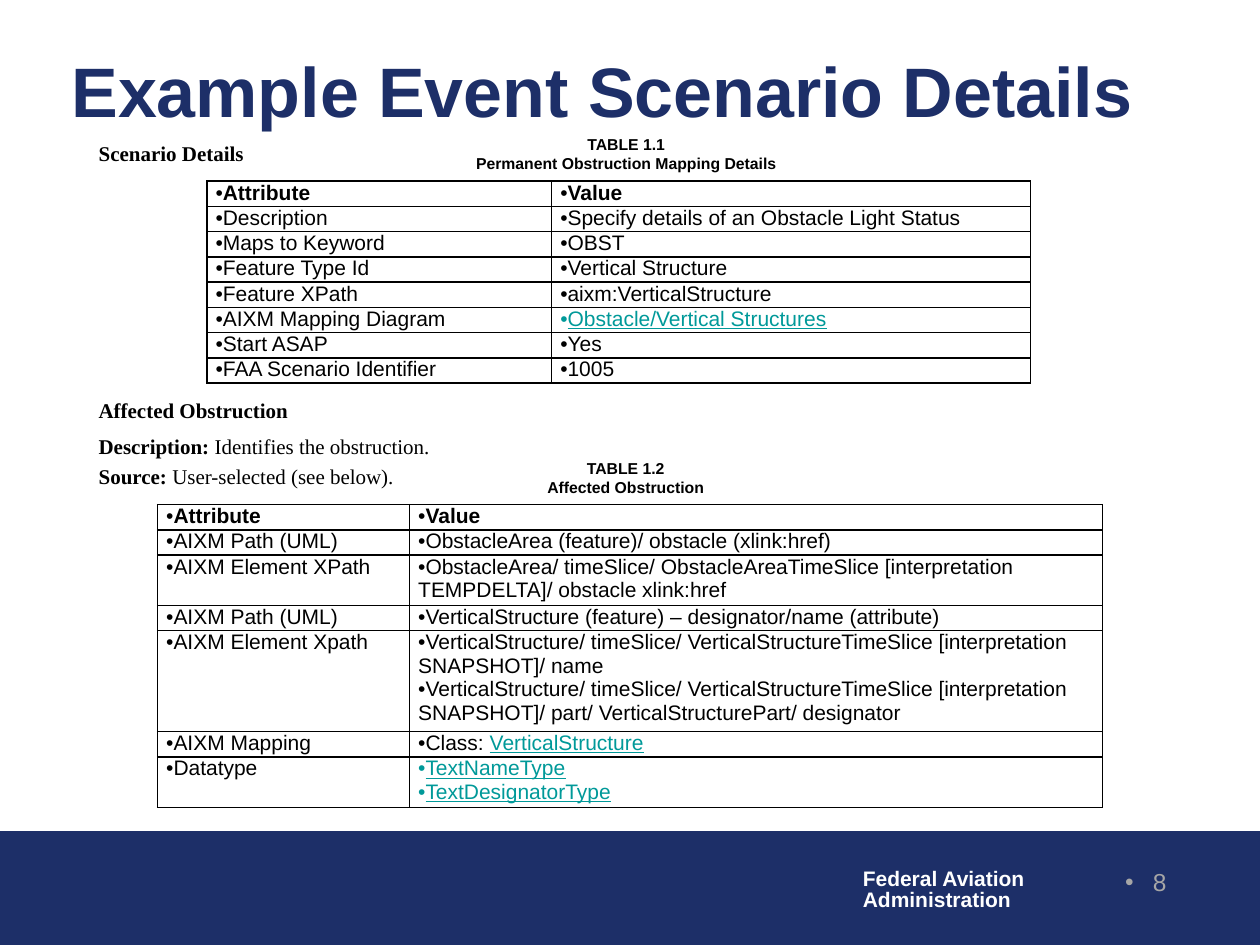
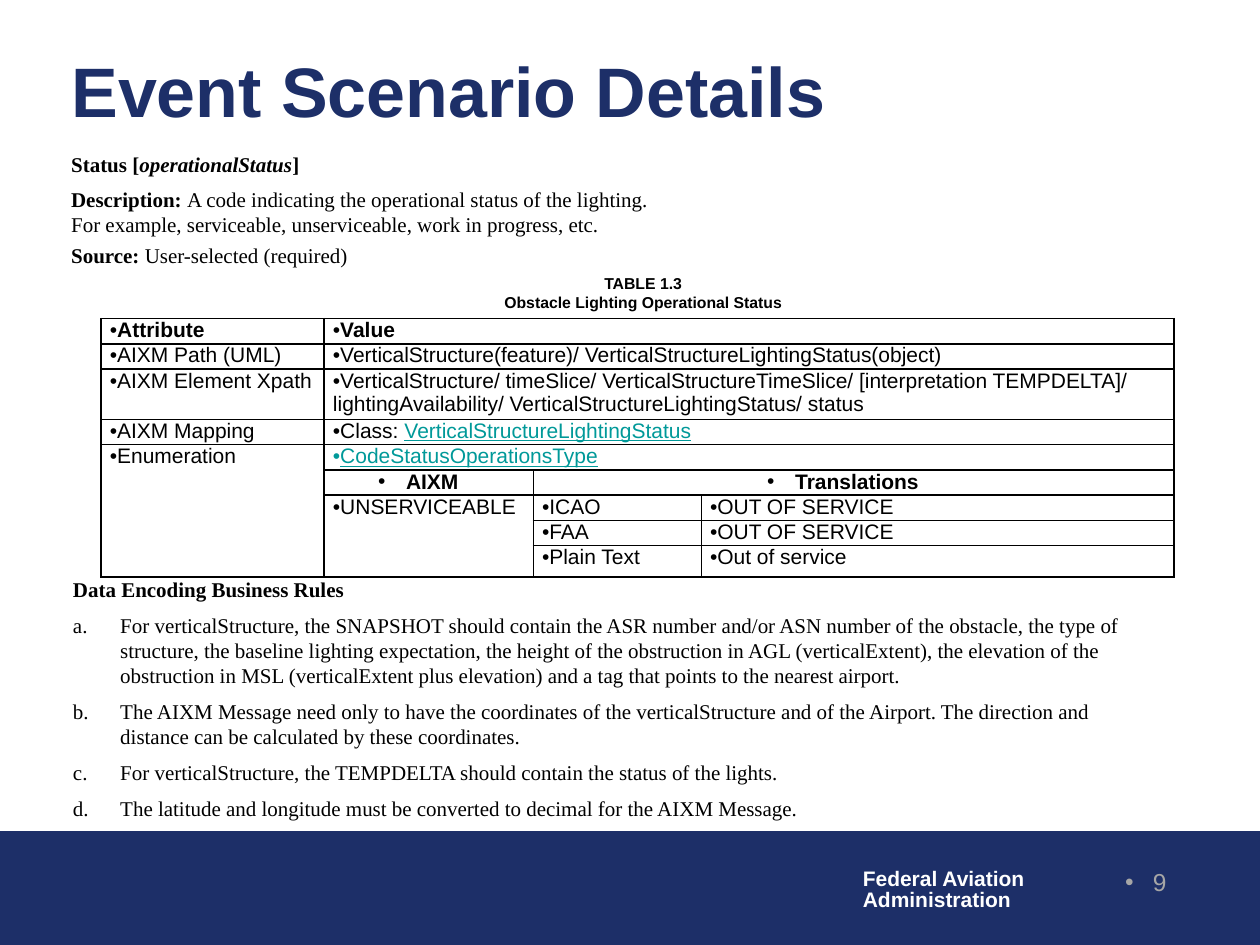
from lxml import etree
from pptx import Presentation
from pptx.dml.color import RGBColor
from pptx.enum.shapes import MSO_SHAPE
from pptx.enum.text import MSO_ANCHOR, MSO_AUTO_SIZE, PP_ALIGN
from pptx.oxml.ns import qn
from pptx.util import Pt

RECTANGLE = MSO_SHAPE.RECTANGLE
MIDDLE, TOP = MSO_ANCHOR.MIDDLE, MSO_ANCHOR.TOP
LEFT, CENTER, RIGHT = PP_ALIGN.LEFT, PP_ALIGN.CENTER, PP_ALIGN.RIGHT
NO_AUTOFIT = MSO_AUTO_SIZE.NONE

NAVY, BLACK, WHITE, GRAY, TEAL = "1D2F68", "000000", "FFFFFF", "A6A6A6", "009999"
SANS, SERIF = "Arial", "Times New Roman"
TITLE_BOX = (33.6, 27, 667, 48)
BAND_BOX = (0, 475, 720, 64.5)
AGENCY_BOX = (486, 493, 108, 32)
NUMBER_BOX = (588.7, 492, 85, 36)
HANGING_DOT = 16


def color(hex_string):
    return RGBColor.from_string(hex_string)


def place(shape, box):
    shape.left, shape.top, shape.width, shape.height = map(Pt, box)


def add_runs(paragraph, runs, font=SANS, size=12, fill=BLACK):
    if isinstance(runs, str):
        runs = [(runs, "")]
    for text, style in runs:
        run = paragraph.add_run()
        run.text = text
        run.font.name = font
        run.font.size = Pt(size)
        run.font.bold = "b" in style
        run.font.italic = "i" in style
        run.font.underline = "u" in style
        run.font.color.rgb = color(TEAL if "u" in style else fill)


def set_bullet(paragraph, tag, indent=0, **attributes):
    properties = paragraph._p.get_or_add_pPr()
    properties.set("marL", str(Pt(indent)))
    properties.set("indent", str(Pt(-indent)))
    if tag == "a:buChar":
        etree.SubElement(properties, qn("a:buFont"), typeface=SANS)
    etree.SubElement(properties, qn(tag), attributes)


def add_dotted_runs(paragraph, runs, indent=0, size=12, fill=BLACK):
    set_bullet(paragraph, "a:buChar", indent, char="•")
    add_runs(paragraph, runs, size=size, fill=fill)
    end = etree.SubElement(paragraph._p, qn("a:endParaRPr"), sz=str(size * 100))
    etree.SubElement(end, qn("a:latin"), typeface=SANS)


def next_paragraph(frame, index, align=LEFT, after=0):
    paragraph = frame.add_paragraph() if index else frame.paragraphs[0]
    paragraph.alignment = align
    paragraph.space_before = Pt(0)
    paragraph.space_after = Pt(after)
    return paragraph


def add_text_frame(slide, box, anchor=TOP, wrap=True):
    text_box = slide.shapes.add_textbox(*map(Pt, box))
    frame = text_box.text_frame
    frame.word_wrap = wrap
    frame.vertical_anchor = anchor
    return frame


def add_band_to_master(presentation, slide):
    band = slide.shapes.add_shape(RECTANGLE, *map(Pt, BAND_BOX))
    band.shadow.inherit = False
    band.fill.solid()
    band.fill.fore_color.rgb = color(NAVY)
    band.line.color.rgb = color(NAVY)
    band.line.width = Pt(0.75)
    agency = slide.shapes.add_textbox(*map(Pt, AGENCY_BOX))
    agency.text_frame.word_wrap = False
    for index, line in enumerate(("Federal Aviation", "Administration")):
        paragraph = next_paragraph(agency.text_frame, index)
        paragraph.line_spacing = 0.85
        add_runs(paragraph, [(line, "b")], fill=WHITE)
    for shape in (band, agency):
        presentation.slide_master.shapes.element.append(shape.element)


def add_title(slide, text):
    title = slide.shapes.title
    place(title, TITLE_BOX)
    frame = title.text_frame
    frame.vertical_anchor = MIDDLE
    frame.auto_size = NO_AUTOFIT
    add_runs(next_paragraph(frame, 0), [(text, "b")], size=40, fill=NAVY)


def add_slide_number(slide, number):
    paragraph = next_paragraph(add_text_frame(slide, NUMBER_BOX), 0, RIGHT)
    add_dotted_runs(paragraph, str(number), HANGING_DOT, 14, GRAY)


def add_caption(slide, box, number, name):
    paragraph = next_paragraph(add_text_frame(slide, box, MIDDLE), 0, CENTER)
    add_runs(paragraph, [(f"TABLE {number}", "b")], size=9)
    paragraph.add_line_break()
    add_runs(paragraph, [(name, "b")], size=9)


def add_notes_block(slide, box, heading, details=()):
    frame = add_text_frame(slide, box)
    add_runs(next_paragraph(frame, 0, after=6), heading, SERIF)
    for index, (label, text) in enumerate(details, 1):
        paragraph = next_paragraph(frame, index, after=3)
        add_runs(paragraph, [(f"{label}: ", "b"), (text, "")], SERIF)


def fill_rules(placeholder, box, heading, rules):
    place(placeholder, box)
    frame = placeholder.text_frame
    frame.auto_size = NO_AUTOFIT
    paragraph = next_paragraph(frame, 0, after=6)
    set_bullet(paragraph, "a:buNone")
    add_runs(paragraph, [(heading, "b")], SERIF)
    for index, rule in enumerate(rules, 1):
        paragraph = next_paragraph(frame, index, after=6)
        set_bullet(paragraph, "a:buAutoNum", 27, type="alphaLcPeriod")
        add_runs(paragraph, rule, SERIF)


def format_cell(cell, right_margin):
    cell.margin_left, cell.margin_right = Pt(5), Pt(right_margin)
    cell.margin_top = cell.margin_bottom = 0
    properties = cell._tc.get_or_add_tcPr()
    for side in ("a:lnL", "a:lnR", "a:lnT", "a:lnB"):
        line = etree.SubElement(properties, qn(side), w=str(Pt(1)))
        solid = etree.SubElement(line, qn("a:solidFill"))
        etree.SubElement(solid, qn("a:srgbClr"), val=BLACK)
    cell.fill.background()


def add_attribute_table(slide, left, top, widths, heights, rows, merges=(), centered=()):
    box = (left, top, sum(widths), sum(heights))
    table = slide.shapes.add_table(len(rows), len(widths), *map(Pt, box)).table
    table.first_row = table.horz_banding = False
    for column, width in zip(table.columns, widths):
        column.width = Pt(width)
    for row, height in zip(table.rows, heights):
        row.height = Pt(height)
    for first, last in merges:
        table.cell(*first).merge(table.cell(*last))
    for row_index, row in enumerate(rows):
        align, indent, right_margin = (CENTER, HANGING_DOT, 17) if row_index in centered else (LEFT, 0, 5)
        for column_index in range(len(widths)):
            cell = table.cell(row_index, column_index)
            format_cell(cell, right_margin)
            paragraphs = row[column_index] if column_index < len(row) else None
            for index, runs in enumerate(paragraphs or ()):
                paragraph = next_paragraph(cell.text_frame, index, align)
                add_dotted_runs(paragraph, runs, indent)
            if not paragraphs:
                cell.text_frame.paragraphs[0].font.size = Pt(1)
                etree.SubElement(cell.text_frame.paragraphs[0]._p, qn("a:endParaRPr"), sz="100")


def bold(text):
    return [[(text, "b")]]


def link(text, lead=""):
    runs = [(lead, "")] if lead else []
    return runs + [(text, "u")]


HEADER = [bold("Attribute"), bold("Value")]


def build_scenario_slide(slide):
    add_title(slide, "Example Event Scenario Details")
    add_notes_block(slide, (49.3, 77, 120, 22), [("Scenario Details", "b")])
    add_caption(slide, (259.3, 73.5, 197, 29), "1.1", "Permanent Obstruction Mapping Details")
    mapping = [
        HEADER,
        [["Description"], ["Specify details of an Obstacle Light Status"]],
        [["Maps to Keyword"], ["OBST"]],
        [["Feature Type Id"], ["Vertical Structure"]],
        [["Feature XPath"], ["aixm:VerticalStructure"]],
        [["AIXM Mapping Diagram"], [link("Obstacle/Vertical Structures")]],
        [["Start ASAP"], ["Yes"]],
        [["FAA Scenario Identifier"], ["1005"]],
    ]
    add_attribute_table(slide, 118.2, 103.5, (197, 273.6), [13.5] * len(mapping), mapping)
    add_notes_block(slide, (49.3, 223.7, 360, 60), [("Affected Obstruction", "b")], [
        ("Description", "Identifies the obstruction."),
        ("Source", "User-selected (see below)."),
    ])
    add_caption(slide, (297.5, 258.5, 120, 29), "1.2", "Affected Obstruction")
    obstruction = [
        HEADER,
        [["AIXM Path (UML)"], ["ObstacleArea (feature)/ obstacle (xlink:href)"]],
        [["AIXM Element XPath"],
         ["ObstacleArea/ timeSlice/ ObstacleAreaTimeSlice [interpretation TEMPDELTA]/ obstacle xlink:href"]],
        [["AIXM Path (UML)"], ["VerticalStructure (feature) – designator/name (attribute)"]],
        [["AIXM Element Xpath"],
         ["VerticalStructure/ timeSlice/ VerticalStructureTimeSlice [interpretation SNAPSHOT]/ name",
          "VerticalStructure/ timeSlice/ VerticalStructureTimeSlice [interpretation SNAPSHOT]/ part/ "
          "VerticalStructurePart/ designator"]],
        [["AIXM Mapping"], [link("VerticalStructure", "Class: ")]],
        [["Datatype"], [link("TextNameType"), link("TextDesignatorType")]],
    ]
    heights = [14.4 * lines for lines in (1, 1, 2, 1, 4, 1, 2)]
    add_attribute_table(slide, 90, 288.3, (144, 396), heights, obstruction)
    add_slide_number(slide, 8)


def build_status_slide(slide):
    add_title(slide, "Event Scenario Details")
    heading = [("Status [", "b"), ("operationalStatus", "bi"), ("]", "b")]
    add_notes_block(slide, (33.6, 82.8, 352, 75), heading, [
        ("Description", "A code indicating the operational status of the lighting. "
                        "For example, serviceable, unserviceable, work in progress, etc."),
        ("Source", "User-selected (required)"),
    ])
    add_caption(slide, (273, 152.5, 189, 29), "1.3", "Obstacle Lighting Operational Status")
    status = [
        HEADER,
        [["AIXM Path (UML)"], ["VerticalStructure(feature)/ VerticalStructureLightingStatus(object)"]],
        [["AIXM Element Xpath"],
         ["VerticalStructure/ timeSlice/ VerticalStructureTimeSlice/ [interpretation TEMPDELTA]/ "
          "lightingAvailability/ VerticalStructureLightingStatus/ status"]],
        [["AIXM Mapping"], [link("VerticalStructureLightingStatus", "Class: ")]],
        [["Enumeration"], [link("CodeStatusOperationsType")]],
        [None, bold("AIXM"), bold("Translations")],
        [None, ["UNSERVICEABLE"], ["ICAO"], ["OUT OF SERVICE"]],
        [None, None, ["FAA"], ["OUT OF SERVICE"]],
        [None, None, ["Plain Text"], ["Out of service"]],
    ]
    merges = [((row, 1), (row, 3)) for row in range(5)]
    merges += [((4, 0), (8, 0)), ((5, 2), (5, 3)), ((6, 1), (8, 1))]
    heights = [13.5, 13.5, 27] + [13.5] * 5 + [18]
    add_attribute_table(slide, 57.8, 182, (127.5, 119.5, 96, 270), heights, status, merges, centered=(5,))
    add_slide_number(slide, 9)
    fill_rules(slide.placeholders[1], (34.5, 326, 628, 148), "Data Encoding Business Rules", [
        "For verticalStructure, the SNAPSHOT should contain the ASR number and/or ASN number of the "
        "obstacle, the type of structure, the baseline lighting expectation, the height of the "
        "obstruction in AGL (verticalExtent), the elevation of the obstruction in MSL "
        "(verticalExtent plus elevation) and a tag that points to the nearest airport.",
        "The AIXM Message need only to have the coordinates of the verticalStructure and of the "
        "Airport. The direction and distance can be calculated by these coordinates.",
        "For verticalStructure, the TEMPDELTA should contain the status of the lights.",
        "The latitude and longitude must be converted to decimal for the AIXM Message.",
    ])


def main():
    presentation = Presentation()
    presentation.slide_width, presentation.slide_height = Pt(720), Pt(540)
    content_layout, title_layout = presentation.slide_layouts[1], presentation.slide_layouts[5]
    scenario_slide = presentation.slides.add_slide(title_layout)
    add_band_to_master(presentation, scenario_slide)
    build_scenario_slide(scenario_slide)
    build_status_slide(presentation.slides.add_slide(content_layout))
    presentation.save("out.pptx")


if __name__ == "__main__":
    main()
